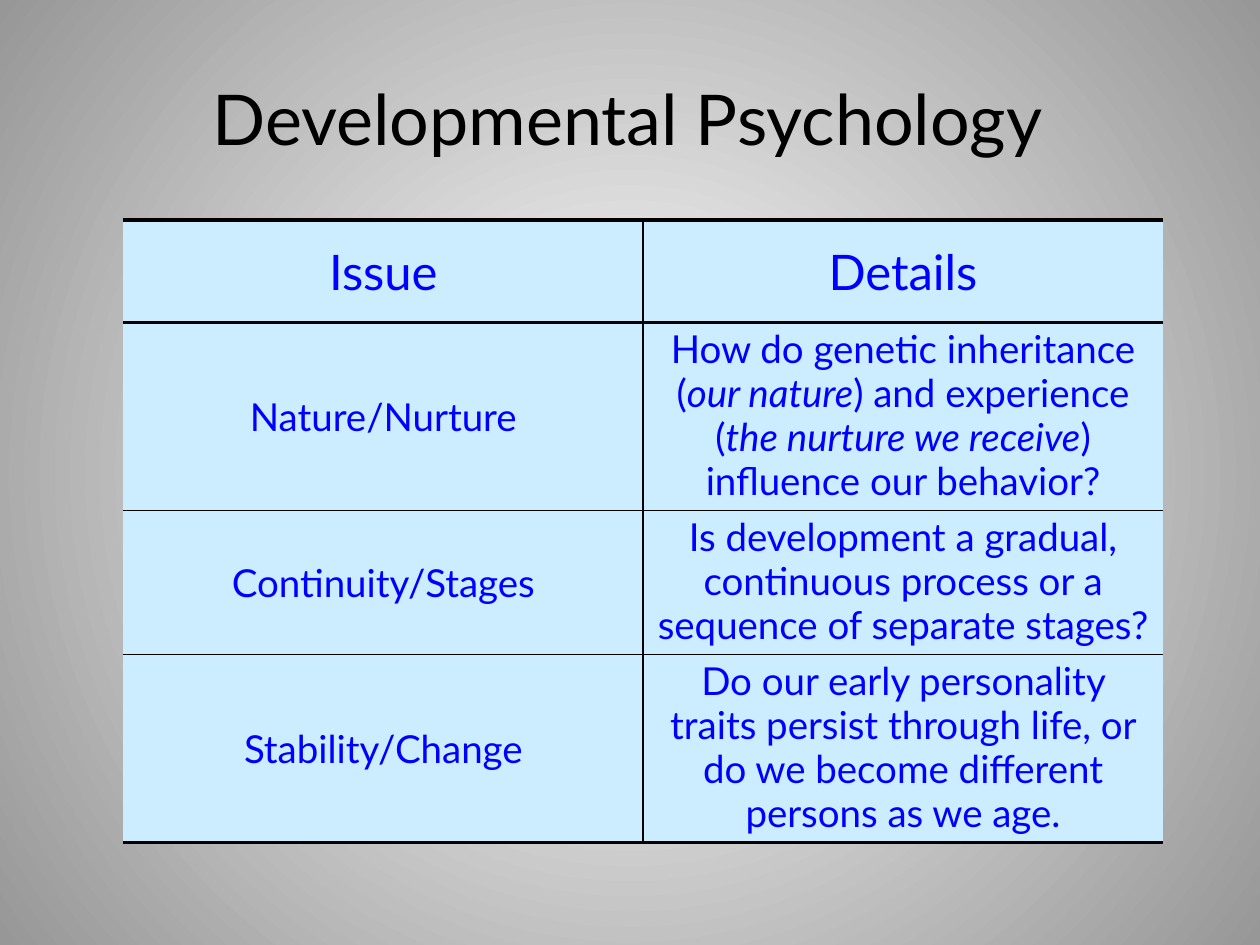
from dataclasses import dataclass

from lxml import etree
from pptx import Presentation
from pptx.dml.color import RGBColor
from pptx.enum.text import MSO_ANCHOR, PP_ALIGN
from pptx.oxml.ns import qn
from pptx.util import Inches, Pt

MIDDLE = MSO_ANCHOR.MIDDLE
CENTER = PP_ALIGN.CENTER


@dataclass(frozen=True)
class Theme:
    """Colours, font and sizes of the slide."""
    font: str = "Lato"
    ink: str = "000000"
    blue: str = "0000FF"
    cell: str = "CCECFF"
    glow: str = "FFFFFF"
    edge: str = "979797"
    title_size: float = 40
    header_size: float = 28
    body_size: float = 22
    thick: float = 2.25
    thin: float = 1


THEME = Theme()
WIDTH, HEIGHT = Inches(10), Inches(7.5)
TITLE_BOX = (0.073, 0.041, 0.85, 0.167)
TABLE_BOX = (0.098, 0.233, 0.825, 0.657)
ROW_HEIGHTS = (0.81, 1.49, 1.14, 1.49)
ISSUES = [
    (["Issue"], ["Details"]),
    (["Nature/Nurture"],
     ["How do genetic inheritance (", "our nature", ") and experience (",
      "the nurture we receive", ") influence our behavior?"]),
    (["Continuity/Stages"],
     ["Is development a gradual, continuous process or a sequence of separate stages?"]),
    (["Stability/Change"],
     ["Do our early personality traits persist through life, or do we become "
      "different persons as we age."]),
]


def place(box):
    """Turn shares of the slide into lengths."""
    left, top, width, height = box
    return (round(left * WIDTH), round(top * HEIGHT),
            round(width * WIDTH), round(height * HEIGHT))


def write(frame, parts, *, size, color, spacing=None):
    """Write one centred paragraph, with every second part in italics."""
    frame.word_wrap = True
    paragraph = frame.paragraphs[0]
    paragraph.alignment = CENTER
    if spacing:
        paragraph.line_spacing = spacing
    for index, part in enumerate(parts):
        run = paragraph.add_run()
        run.text = part
        run.font.name = THEME.font
        run.font.size = Pt(size)
        run.font.bold = False
        run.font.italic = index % 2 == 1
        run.font.color.rgb = RGBColor.from_string(color)


def paint_background(slide):
    """Fill the background with a circular gradient from its centre."""
    fill = slide.background.fill
    fill.gradient()
    for stop, color in zip(fill.gradient_stops, (THEME.glow, THEME.edge)):
        stop.color.rgb = RGBColor.from_string(color)
    gradient = slide.background._cSld.find(".//" + qn("a:gradFill"))
    gradient.remove(gradient.find(qn("a:lin")))
    circle = etree.SubElement(gradient, qn("a:path"), {"path": "circle"})
    etree.SubElement(circle, qn("a:fillToRect"), dict.fromkeys("ltrb", "50000"))


def set_borders(cell, widths):
    """Draw left, right, top and bottom borders; a zero width hides one."""
    properties = cell._tc.get_or_add_tcPr()
    for index, (side, width) in enumerate(zip("LRTB", widths)):
        line = etree.Element(qn(f"a:ln{side}"), {"w": str(int(Pt(width)))})
        if width:
            solid = etree.SubElement(line, qn("a:solidFill"))
            etree.SubElement(solid, qn("a:srgbClr"), {"val": THEME.ink})
        else:
            etree.SubElement(line, qn("a:noFill"))
        properties.insert(index, line)


def add_title(slide, box, title):
    """Place the slide title in its box."""
    frame = slide.shapes.add_textbox(*place(box)).text_frame
    frame.vertical_anchor = MIDDLE
    write(frame, [title], size=THEME.title_size, color=THEME.ink)


def add_issue_table(slide, box, issues):
    """Place the table of issues, ruled heavily around header and foot."""
    table = slide.shapes.add_table(len(issues), len(issues[0]), *place(box)).table
    table.first_row = table.horz_banding = False
    for row, height in zip(table.rows, ROW_HEIGHTS):
        row.height = Inches(height)
    last = len(issues) - 1
    for row, issue in enumerate(issues):
        top = THEME.thick if row <= 1 else THEME.thin
        bottom = THEME.thick if row in (0, last) else THEME.thin
        for column, parts in enumerate(issue):
            cell = table.cell(row, column)
            cell.vertical_anchor = MIDDLE
            cell.fill.solid()
            cell.fill.fore_color.rgb = RGBColor.from_string(THEME.cell)
            sides = (THEME.thin, 0) if column else (0, THEME.thin)
            set_borders(cell, (*sides, top, bottom))
            write(cell.text_frame, parts, color=THEME.blue,
                  size=THEME.body_size if row else THEME.header_size,
                  spacing=0.95 if row and column else None)


def main():
    """Build the slide and save it."""
    deck = Presentation()
    deck.slide_width, deck.slide_height = WIDTH, HEIGHT
    slide = deck.slides.add_slide(deck.slide_layouts[6])
    paint_background(slide)
    add_title(slide, TITLE_BOX, "Developmental Psychology")
    add_issue_table(slide, TABLE_BOX, ISSUES)
    deck.save("out.pptx")


if __name__ == "__main__":
    main()
